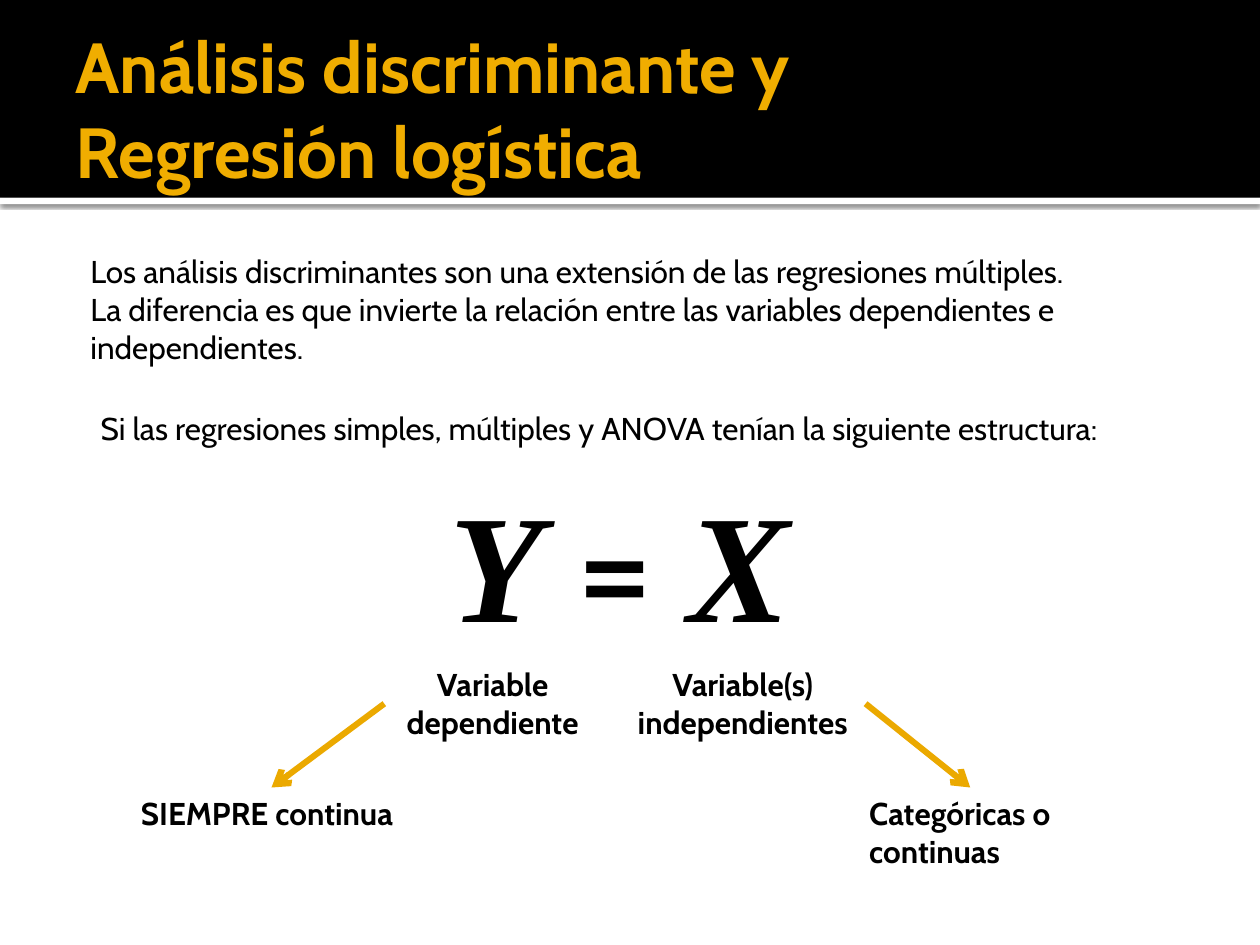
from lxml import etree
from pptx import Presentation, util as u
from pptx.dml.color import RGBColor
from pptx.enum import shapes, text
from pptx.oxml import parse_xml
from pptx.oxml.ns import nsdecls, qn

BLACK = RGBColor(0x00, 0x00, 0x00)
WHITE = RGBColor(0xFF, 0xFF, 0xFF)
GOLD = RGBColor(0xF0, 0xAD, 0x00)
ARROW = RGBColor(0xEB, 0xA9, 0x00)
SANS, SERIF = "Cabin", "Times New Roman"
W, H = 10, 7.5
BAND_H, STRIP_H = 1.57, 0.05
LABEL_Y, DETAIL_Y = 5.23, 6.25

TITLE = ["Análisis discriminante y ", "Regresión logística"]
INTRO = [
    "Los análisis discriminantes son una extensión de las regresiones múltiples.",
    "La diferencia es que invierte la relación entre las variables dependientes e independientes.",
]
STRUCTURE = ["Si las regresiones simples, múltiples y ANOVA tenían la siguiente estructura:"]
EQUATION = [("Y ", SERIF, True), ("= ", SANS, False), ("X", SERIF, True)]
BRANCHES = [
    {"label": ["Variable dependiente"], "label_at": (3.05, LABEL_Y, 1.72, 0.71),
     "detail": ["SIEMPRE continua"], "detail_at": (1.02, DETAIL_Y, 2.27, 0.4), "side": 1},
    {"label": ["Variable(s) independientes"], "label_at": (4.92, LABEL_Y, 1.95, 0.71),
     "detail": ["Categóricas o", "continuas"], "detail_at": (6.8, DETAIL_Y, 1.8, 0.71), "side": 3},
]

SHADOW = (
    f'<a:effectLst {nsdecls("a")}><a:outerShdw blurRad="{u.Pt(2.5)}" dist="{u.Pt(0.8)}" '
    'dir="5400000" algn="t" rotWithShape="0"><a:srgbClr val="000000"><a:alpha val="60000"/>'
    '</a:srgbClr></a:outerShdw></a:effectLst>'
)


def inches(at):
    return [u.Inches(v) for v in at]


def add_run(p, words, size=18, font=SANS, bold=False, italic=False, color=BLACK):
    r = p.add_run()
    r.text = words
    f = r.font
    f.size, f.name, f.bold, f.italic = u.Pt(size), font, bold, italic
    f.color.rgb = color


def add_box(s, at):
    sp = s.shapes.add_textbox(*inches(at))
    sp.text_frame.word_wrap = True
    sp.text_frame.auto_size = text.MSO_AUTO_SIZE.SHAPE_TO_FIT_TEXT
    return sp


def add_text(s, at, lines, bold=False, align=text.PP_ALIGN.LEFT):
    sp = add_box(s, at)
    tf = sp.text_frame
    for i, line in enumerate(lines):
        p = tf.add_paragraph() if i else tf.paragraphs[0]
        p.alignment = align
        add_run(p, line, bold=bold)
    return sp


def add_band(s, y, height, color):
    sp = s.shapes.add_shape(shapes.MSO_SHAPE.RECTANGLE, *inches((0, y, W, height)))
    sp.fill.solid()
    sp.fill.fore_color.rgb = color
    sp.line.fill.background()
    sp.shadow.inherit = False
    s.shapes.title.element.addprevious(sp.element)
    return sp


def add_header(s):
    strip = add_band(s, BAND_H, STRIP_H, WHITE)
    props = strip.element.spPr
    props.replace(props.find(qn("a:effectLst")), parse_xml(SHADOW))
    add_band(s, 0, BAND_H, BLACK)

    title = s.shapes.title
    title.left, title.top, title.width, title.height = inches((0.5, 0.17, W - 1, 1.37))
    tf = title.text_frame
    tf.word_wrap = True
    tf.auto_size = text.MSO_AUTO_SIZE.NONE
    tf.vertical_anchor = text.MSO_ANCHOR.MIDDLE
    tf.margin_left = u.Inches(0.1)
    tf.margin_right = tf.margin_top = tf.margin_bottom = u.Inches(0.05)
    p = tf.paragraphs[0]
    p.alignment = text.PP_ALIGN.LEFT
    for i, line in enumerate(TITLE):
        if i:
            p.add_line_break()
        add_run(p, line, size=40.5, bold=True, color=GOLD)


def add_arrow(s, start, side, end):
    line = s.shapes.add_connector(shapes.MSO_CONNECTOR.STRAIGHT, 0, 0, 0, 0)
    line.begin_connect(start, side)
    line.end_connect(end, 0)
    line.line.color.rgb = ARROW
    line.line.width = u.Pt(3.5)
    etree.SubElement(line.line._get_or_add_ln(), qn("a:tailEnd"), type="arrow")
    etree.SubElement(line.element.spPr, qn("a:effectLst"))


def main():
    prs = Presentation()
    prs.slide_width, prs.slide_height = inches((W, H))
    s = prs.slides.add_slide(prs.slide_layouts[5])
    add_header(s)
    add_text(s, (0.62, 1.95, 9.14, 1.01), INTRO)
    add_text(s, (0.7, 3.2, 8.28, 0.4), STRUCTURE)

    p = add_box(s, (3.28, 3.67, 3.28, 1.58)).text_frame.paragraphs[0]
    p.alignment = text.PP_ALIGN.CENTER
    for words, font, strong in EQUATION:
        add_run(p, words, 88, font, strong, strong)

    for b in BRANCHES:
        label = add_text(s, b["label_at"], b["label"], True, text.PP_ALIGN.CENTER)
        detail = add_text(s, b["detail_at"], b["detail"], True)
        add_arrow(s, label, b["side"], detail)
    prs.save("out.pptx")


if __name__ == "__main__":
    main()
